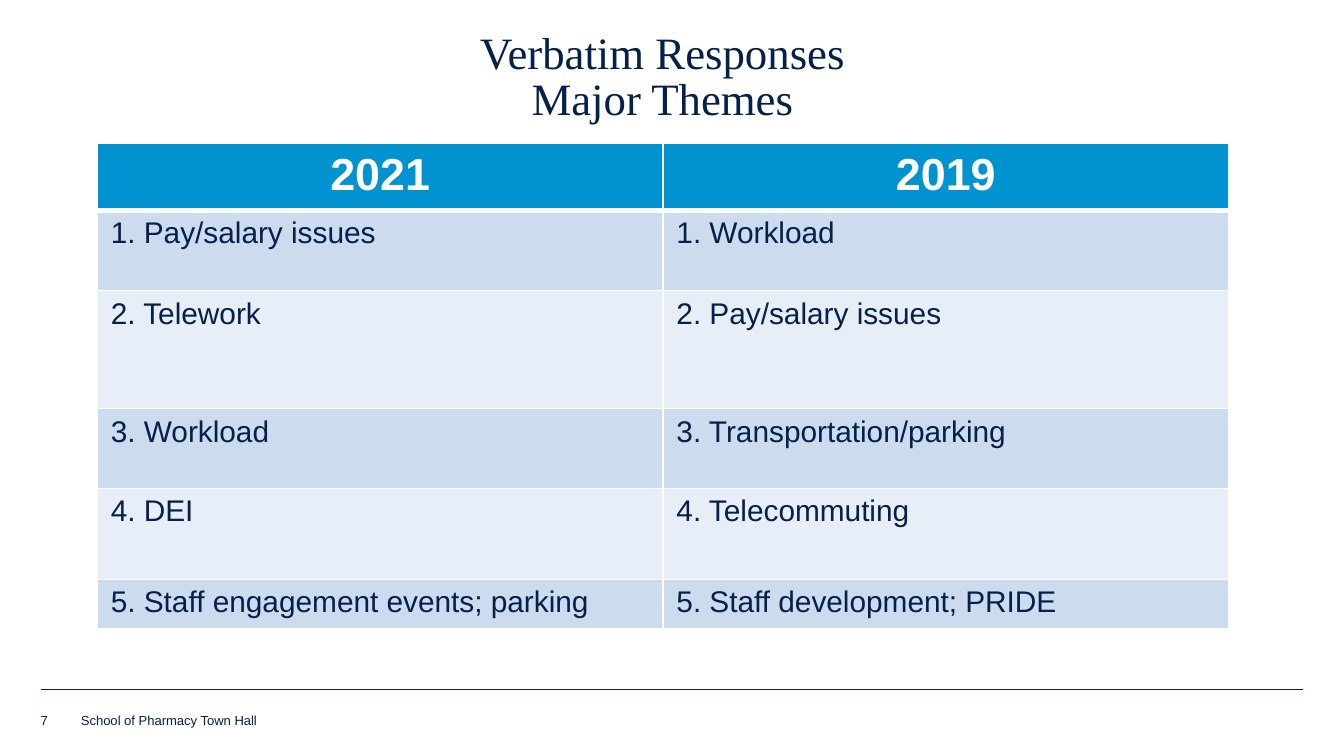
from lxml import etree
from pptx import Presentation
from pptx import util as u
from pptx.dml import color
from pptx.enum import shapes, text
from pptx.oxml import ns

COLORS = {
    "navy": "052049",
    "header": "0093D0",
    "odd": "CCDCEE",
    "even": "E7EEF7",
    "white": "FFFFFF",
}
THEMES = [
    ("2021", "2019"),
    ("1. Pay/salary issues", "1. Workload"),
    ("2. Telework", "2. Pay/salary issues"),
    ("3. Workload", "3. Transportation/parking"),
    ("4. DEI", "4. Telecommuting"),
    ("5. Staff engagement events; parking", "5. Staff development; PRIDE"),
]
ROW_HEIGHTS = [1.21, 1.52, 2.23, 1.51, 1.72, 0.89]


def rgb(name):
    """Return the named colour."""
    return color.RGBColor.from_string(COLORS[name])


def add_span(para, words, size, font="Arial", tint="navy", bold=False):
    """Append one styled run to a paragraph."""
    span = para.add_run()
    span.text = words
    span.font.name = font
    span.font.size = u.Pt(size)
    span.font.bold = bold
    span.font.color.rgb = rgb(tint)


def add_box(page, left, top, width, height, inset=0):
    """Add a bottom-anchored text box and return its frame."""
    box = page.shapes.add_textbox(u.Cm(left), u.Cm(top), u.Cm(width), u.Cm(height))
    frame = box.text_frame
    frame.word_wrap = True
    frame.vertical_anchor = text.MSO_ANCHOR.BOTTOM
    frame.margin_left = frame.margin_right = u.Cm(inset)
    frame.margin_top = frame.margin_bottom = u.Cm(inset / 2)
    return frame


def add_title(page, left, top, width, height):
    """Place the centred two-line title."""
    para = add_box(page, left, top, width, height, 0.25).paragraphs[0]
    para.alignment = text.PP_ALIGN.CENTER
    para.line_spacing = 0.85
    add_span(para, "Verbatim Responses", 24, "Times New Roman")
    para.add_line_break()
    add_span(para, "Major Themes", 24, "Times New Roman")


def set_borders(cell, widths):
    """Draw white borders on a cell, widths in points by side."""
    properties = cell._tc.get_or_add_tcPr()
    for side, width in widths.items():
        line = etree.SubElement(properties, ns.qn(f"a:ln{side}"), w=str(u.Pt(width)))
        fill = etree.SubElement(line, ns.qn("a:solidFill"))
        etree.SubElement(fill, ns.qn("a:srgbClr"), val=COLORS["white"])


def add_themes(page, left, top, width):
    """Place the table comparing the themes of both years."""
    frame = page.shapes.add_table(
        len(THEMES), 2, u.Cm(left), u.Cm(top), u.Cm(width), u.Cm(sum(ROW_HEIGHTS))
    )
    table = frame.table
    for column in table.columns:
        column.width = u.Cm(width / 2)
    for row, (height, entries) in enumerate(zip(ROW_HEIGHTS, THEMES)):
        table.rows[row].height = u.Cm(height)
        header = row == 0
        band = "header" if header else ("even", "odd")[row % 2]
        for column, words in enumerate(entries):
            cell = table.cell(row, column)
            set_borders(cell, {"L": 1, "R": 1, "T": 3 if row == 1 else 1, "B": 3 if header else 1})
            cell.fill.solid()
            cell.fill.fore_color.rgb = rgb(band)
            para = cell.text_frame.paragraphs[0]
            if header:
                para.alignment = text.PP_ALIGN.CENTER
                add_span(para, words, 24, tint="white", bold=True)
            else:
                add_span(para, words, 16)


def add_footer(page, left, top, width):
    """Place the rule, the page number and the event name."""
    rule = page.shapes.add_connector(
        shapes.MSO_CONNECTOR.STRAIGHT, u.Cm(left), u.Cm(top), u.Cm(left + width), u.Cm(top)
    )
    rule.line.color.rgb = rgb("navy")
    rule.line.width = u.Pt(0.25)
    etree.SubElement(rule._element.spPr, ns.qn("a:effectLst"))
    event = add_box(page, left + 0.76, top + 0.46, 11.96, 0.28)
    add_span(event.paragraphs[0], "School of Pharmacy Town Hall", 7)
    number = add_box(page, left, top + 0.41, 0.69, 0.33)
    add_span(number.paragraphs[0], "7", 7)


def main():
    """Build and save the deck."""
    deck = Presentation()
    deck.slide_width, deck.slide_height = u.Cm(25.4), u.Cm(14.29)
    page = deck.slides.add_slide(deck.slide_layouts[6])
    add_footer(page, 0.77, 13.03, 23.86)
    add_title(page, 1.09, 0.3, 22.86, 2.18)
    add_themes(page, 1.84, 2.7, 21.38)
    deck.save("out.pptx")


if __name__ == "__main__":
    main()
